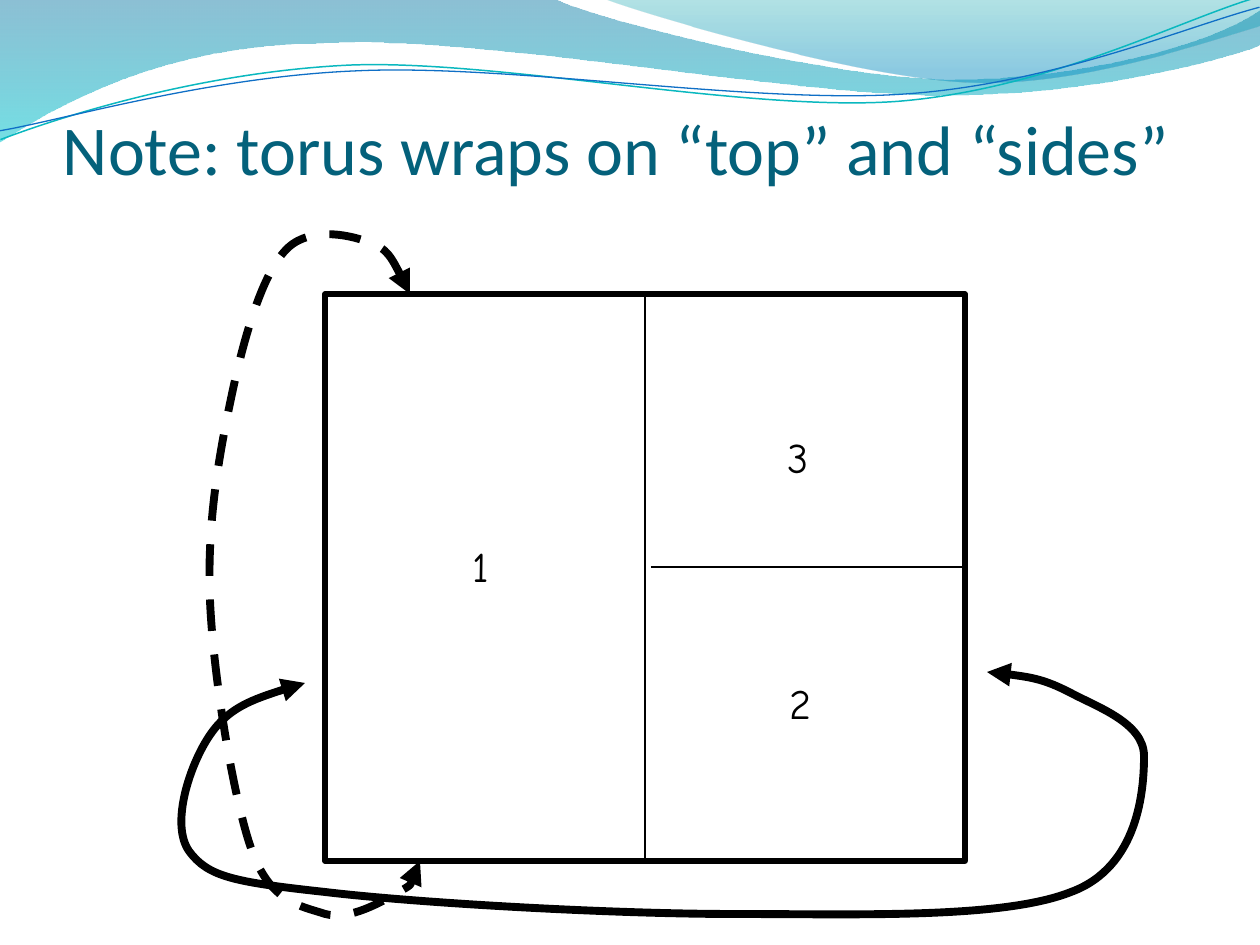
import lxml.etree
import pptx
import pptx.dml.color
import pptx.enum.dml
import pptx.enum.shapes
import pptx.enum.text
import pptx.oxml.ns
import pptx.util

PX = pptx.util.Inches(1) / 126
RGB = pptx.dml.color.RGBColor
BLACK = RGB(0x00, 0x00, 0x00)
TITLE_TEAL = RGB(0x04, 0x61, 0x7B)
WAVE_TEAL = RGB(0x0A, 0xB8, 0xBF)
WAVE_BLUE = RGB(0x0F, 0x6F, 0xC6)
BAND_BLUE = RGB(0x00, 0x74, 0xA1)
BAND_CYAN = RGB(0x00, 0xC6, 0xCF)
CORNER_TEAL = RGB(0x00, 0xA1, 0xA9)
CORNER_BLUE = RGB(0x00, 0x8B, 0xBF)

BAND = (0, -1), [
    [(554, -1)],
    [(600, 21), (837, 79), (955, 79)],
    [(1075, 79), (1207, 47), (1260, 11)],
    [(1261, 45)],
    [(1239, 55), (1096, 96), (940, 95)],
    [(784, 95), (481, 35), (324, 43)],
    [(163, 44), (58, 105), (-1, 142)],
]
CORNER = (604, -1), [
    [(641, 14), (859, 78), (969, 82)],
    [(1079, 87), (1211, 40), (1260, 26)],
    [(1260, 0)],
]
TEAL_WAVE = (-2, 110), [
    [(59, 90), (200, 52), (350, 52)],
    [(499, 53), (745, 118), (896, 114)],
    [(1049, 109), (1184, 45), (1260, 27)],
]
BLUE_WAVE = (-2, 101), [
    [(58, 94), (208, 57), (357, 58)],
    [(509, 58), (750, 110), (902, 107)],
    [(1052, 104), (1187, 53), (1262, 37)],
]
SIDE_WRAP = (305, 683), [
    [(267, 694), (229, 707), (210, 735)],
    [(190, 764), (170, 824), (189, 851)],
    [(208, 877), (234, 882), (325, 892)],
    [(417, 903), (611, 914), (735, 914)],
    [(859, 914), (1003, 919), (1071, 892)],
    [(1139, 867), (1144, 789), (1144, 756)],
    [(1144, 723), (1097, 707), (1071, 693)],
    [(1044, 679), (1020, 675), (987, 672)],
]
TOP_WRAP = (410, 294), [
    [(399, 271), (388, 248), (368, 242)],
    [(347, 234), (306, 226), (284, 252)],
    [(261, 278), (243, 341), (231, 399)],
    [(219, 456), (207, 523), (210, 599)],
    [(213, 674), (233, 798), (252, 851)],
    [(271, 903), (301, 906), (325, 914)],
    [(350, 921), (383, 901), (399, 892)],
    [(415, 883), (417, 872), (420, 861)],
]


def emu(*lengths):
    return [round(length * PX) for length in lengths]


def add_child(parent, tag, **attributes):
    return lxml.etree.SubElement(parent, pptx.oxml.ns.qn(tag), attributes)


def write(frame, text, size, font, color, insets=(13, 6, 13, 6), wrap=False,
          anchor=pptx.enum.text.MSO_ANCHOR.TOP):
    frame.word_wrap = wrap
    frame.vertical_anchor = anchor
    (frame.margin_left, frame.margin_top,
     frame.margin_right, frame.margin_bottom) = emu(*insets)
    run = frame.paragraphs[0].add_run()
    run.text = text
    run.font.size = pptx.util.Pt(size)
    run.font.name = font
    run.font.color.rgb = color


class TorusSlide:
    label_style = dict(size=24, font="Comic Neue", color=BLACK)
    title_style = dict(size=40, font="Calibri", color=TITLE_TEAL, insets=(0, 6, 0, 0),
                       wrap=True, anchor=pptx.enum.text.MSO_ANCHOR.BOTTOM)

    def __init__(self, deck):
        self.shapes = deck.slides.add_slide(deck.slide_layouts[6]).shapes

    def outline(self, shape, color, width):
        shape.line.color.rgb = color
        shape.line.width = pptx.util.Pt(width)

    def text(self, text, left, top, width, height, **style):
        box = self.shapes.add_textbox(*emu(left, top, width, height))
        write(box.text_frame, text, **style)

    def rectangle(self, left, top, width, height, line_width):
        rectangle = self.shapes.add_shape(
            pptx.enum.shapes.MSO_SHAPE.RECTANGLE, *emu(left, top, width, height))
        rectangle.shadow.inherit = False
        rectangle.fill.background()
        self.outline(rectangle, BLACK, line_width)
        return rectangle

    def divider(self, x1, y1, x2, y2):
        divider = self.shapes.add_connector(
            pptx.enum.shapes.MSO_CONNECTOR.STRAIGHT, *emu(x1, y1, x2, y2))
        self.outline(divider, BLACK, 0.75)
        add_child(divider._element.spPr, "a:effectLst")
        return divider

    def freeform(self, start, segments, close=False):
        builder = self.shapes.build_freeform(*start, scale=PX)
        builder.add_line_segments([p for segment in segments for p in segment], close=close)
        freeform = builder.convert_to_shape()
        freeform.shadow.inherit = False
        steps = iter(freeform._element.xpath(".//a:lnTo"))
        for segment in segments:
            group = [next(steps) for _ in segment]
            if len(group) == 3:
                cubic = lxml.etree.Element(pptx.oxml.ns.qn("a:cubicBezTo"))
                group[0].addprevious(cubic)
                for step in group:
                    cubic.append(step[0])
                    step.getparent().remove(step)
        return freeform

    def band(self, start, segments, *stops):
        band = self.freeform(start, segments, close=True)
        band.line.fill.background()
        band.fill.gradient()
        band.fill.gradient_angle = 270
        for stop, (position, color, _) in zip(band.fill.gradient_stops, stops):
            stop.position = position
            stop.color.rgb = color
        tints = band._element.spPr.xpath("./a:gradFill//a:srgbClr")
        for tint, (_, _, opacity) in zip(tints, stops):
            add_child(tint, "a:alpha", val=str(opacity * 1000))

    def curve(self, start, segments, color, width, rotation=0):
        curve = self.freeform(start, segments)
        curve.fill.background()
        curve.rotation = rotation
        self.outline(curve, color, width)
        return curve

    def wrap_arrow(self, start, segments, dash=None):
        arrow = self.curve(start, segments, BLACK, 4.5)
        if dash:
            arrow.line.dash_style = dash
        for end in ("a:headEnd", "a:tailEnd"):
            add_child(arrow.line._get_or_add_ln(), end, type="triangle")


def main():
    deck = pptx.Presentation()
    deck.slide_width, deck.slide_height = emu(1260, 945)
    slide = TorusSlide(deck)

    slide.band(*BAND, (0, BAND_BLUE, 45), (1, BAND_CYAN, 55))
    slide.band(*CORNER, (0, CORNER_TEAL, 30), (0.8, CORNER_BLUE, 45))
    slide.curve(*TEAL_WAVE, WAVE_TEAL, 0.85, rotation=357.3)
    slide.curve(*BLUE_WAVE, WAVE_BLUE, 0.75, rotation=357.3)

    slide.text("Note: torus wraps on “top” and “sides”", 63, 97, 1134, 92,
               **slide.title_style)

    torus = slide.rectangle(325, 294, 640, 567, 3)
    middle = slide.divider(645, 294, 645, 861)
    middle.begin_connect(torus, 0)
    middle.end_connect(torus, 2)
    slide.divider(651, 567, 966, 567)
    for number, left, top, width in (("1", 460, 535, 44), ("2", 777, 672, 50),
                                     ("3", 775, 426, 50)):
        slide.text(number, left, top, width, 63, **slide.label_style)

    slide.wrap_arrow(*SIDE_WRAP)
    slide.wrap_arrow(*TOP_WRAP, dash=pptx.enum.dml.MSO_LINE.DASH)
    deck.save("out.pptx")


if __name__ == "__main__":
    main()
